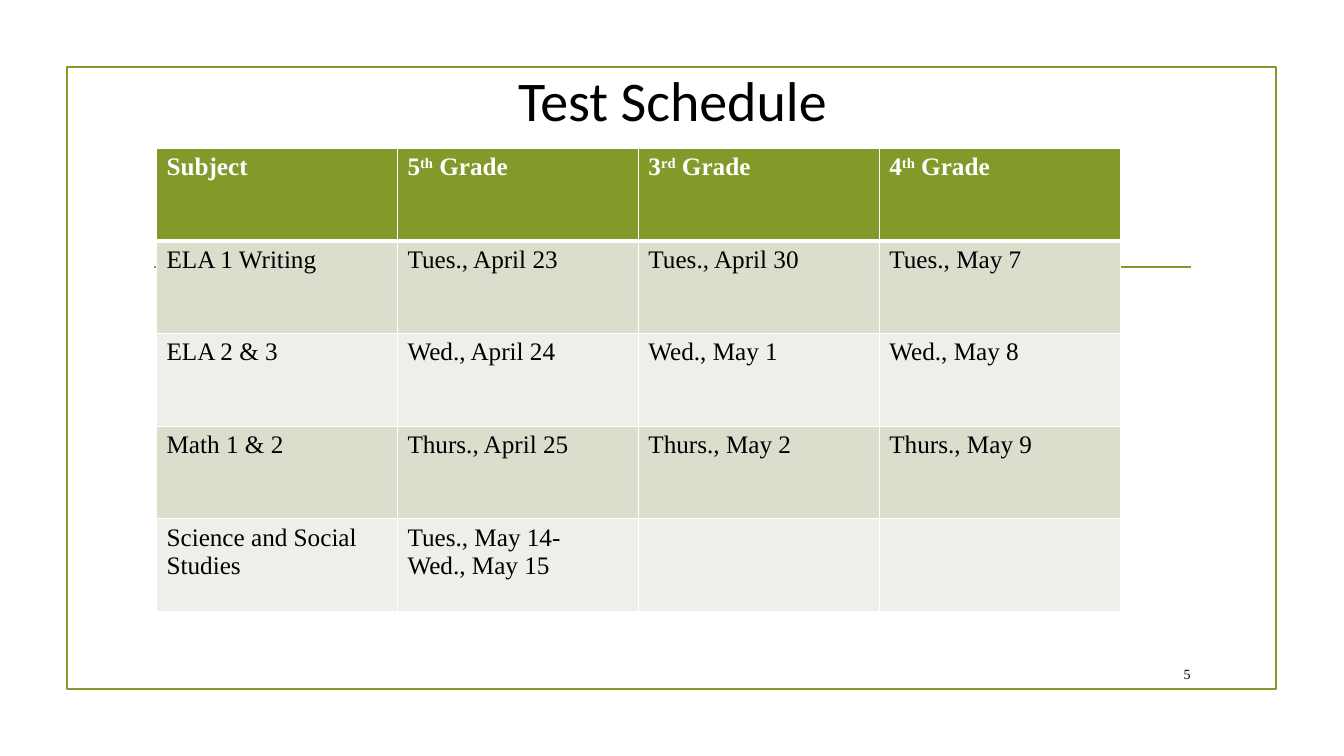
from lxml import etree
from pptx import Presentation
from pptx.dml.color import RGBColor
from pptx.enum.shapes import MSO_CONNECTOR, MSO_SHAPE
from pptx.enum.text import MSO_ANCHOR, PP_ALIGN
from pptx.oxml.ns import qn
from pptx.util import Pt

RECTANGLE = MSO_SHAPE.RECTANGLE
STRAIGHT = MSO_CONNECTOR.STRAIGHT
MIDDLE = MSO_ANCHOR.MIDDLE
CENTER, RIGHT = PP_ALIGN.CENTER, PP_ALIGN.RIGHT

GREEN = RGBColor(0x83, 0x99, 0x2A)
DARK_BAND = RGBColor(0xD9, 0xDE, 0xCD)
LIGHT_BAND = RGBColor(0xED, 0xEF, 0xE8)
BLACK = RGBColor(0, 0, 0)
WHITE = RGBColor(0xFF, 0xFF, 0xFF)

SERIF = "Times New Roman"
HEADER = ["Subject", ("5", "th", " Grade"), ("3", "rd", " Grade"), ("4", "th", " Grade")]
SCHEDULE = [
    ["ELA 1 Writing", "Tues., April 23", "Tues., April 30", "Tues., May 7"],
    ["ELA 2 & 3", "Wed., April 24", "Wed., May 1", "Wed., May 8"],
    ["Math 1 & 2", "Thurs., April 25", "Thurs., May 2", "Thurs., May 9"],
    ["Science and Social Studies", "Tues., May 14-\nWed., May 15", "", ""],
]


def style_font(para, name, size, color, bold=False):
    para.font.name = name
    para.font.size = Pt(size)
    para.font.color.rgb = color
    para.font.bold = bold


def add_frame(slide, left, top, width, height):
    """Draw the outline and the rule that crosses it behind the table."""
    frame = slide.shapes.add_shape(RECTANGLE, Pt(left), Pt(top), Pt(width), Pt(height))
    frame.shadow.inherit = False
    frame.fill.background()
    rule_y = Pt(top + 142.5)
    rule = slide.shapes.add_connector(
        STRAIGHT, Pt(left + 62.5), rule_y, Pt(left + width - 61), rule_y)
    etree.SubElement(rule._element.spPr, qn("a:effectLst"))
    for outlined in (frame, rule):
        outlined.line.color.rgb = GREEN
        outlined.line.width = Pt(1.25)


def add_label(slide, left, top, width, height, text, font, size, align):
    box = slide.shapes.add_textbox(Pt(left), Pt(top), Pt(width), Pt(height))
    frame = box.text_frame
    frame.word_wrap = True
    frame.vertical_anchor = MIDDLE
    para = frame.paragraphs[0]
    para.text = text
    para.alignment = align
    style_font(para, font, size, BLACK)
    return frame


def add_title(slide, left, top, width, height):
    """Place the title a little above and left of the middle of its box."""
    frame = add_label(slide, left, top, width, height, "Test Schedule", "Calibri", 40, CENTER)
    frame.margin_bottom = Pt(33)
    frame.margin_right = Pt(16)


def set_borders(cell, bottom_width):
    properties = cell._tc.get_or_add_tcPr()
    for side, width in (("L", 1), ("R", 1), ("T", 1), ("B", bottom_width)):
        line = etree.SubElement(properties, qn(f"a:ln{side}"), w=str(Pt(width)))
        fill = etree.SubElement(line, qn("a:solidFill"))
        etree.SubElement(fill, qn("a:srgbClr"), val=str(WHITE))


def fill_cell(cell, content, fill, color, is_header):
    set_borders(cell, 3 if is_header else 1)
    cell.fill.solid()
    cell.fill.fore_color.rgb = fill
    if isinstance(content, tuple):
        para = cell.text_frame.paragraphs[0]
        spans = [para.add_run() for _ in content]
        for span, text in zip(spans, content):
            span.text = text
        spans[1]._r.get_or_add_rPr().set("baseline", "30000")
    else:
        cell.text_frame.text = content
    for para in cell.text_frame.paragraphs:
        style_font(para, SERIF, 18, color, is_header)


def add_schedule(slide, left, top, width, height):
    rows = [HEADER] + SCHEDULE
    table = slide.shapes.add_table(
        len(rows), len(HEADER), Pt(left), Pt(top), Pt(width), Pt(height)).table
    for row_index, row in enumerate(rows):
        is_header = row_index == 0
        band = DARK_BAND if row_index % 2 else LIGHT_BAND
        fill, color = (GREEN, WHITE) if is_header else (band, BLACK)
        for column_index, content in enumerate(row):
            fill_cell(table.cell(row_index, column_index), content, fill, color, is_header)


def main():
    deck = Presentation()
    deck.slide_width, deck.slide_height = Pt(960), Pt(540)
    slide = deck.slides.add_slide(deck.slide_layouts[6])
    add_frame(slide, 47.7, 48, 864, 444)
    add_title(slide, 213, 37.5, 543.5, 96.5)
    add_label(slide, 815, 470, 42.5, 22.5, "5", SERIF, 10, RIGHT)
    add_schedule(slide, 111.8, 105.8, 688.4, 331)
    deck.save("out.pptx")


if __name__ == "__main__":
    main()
